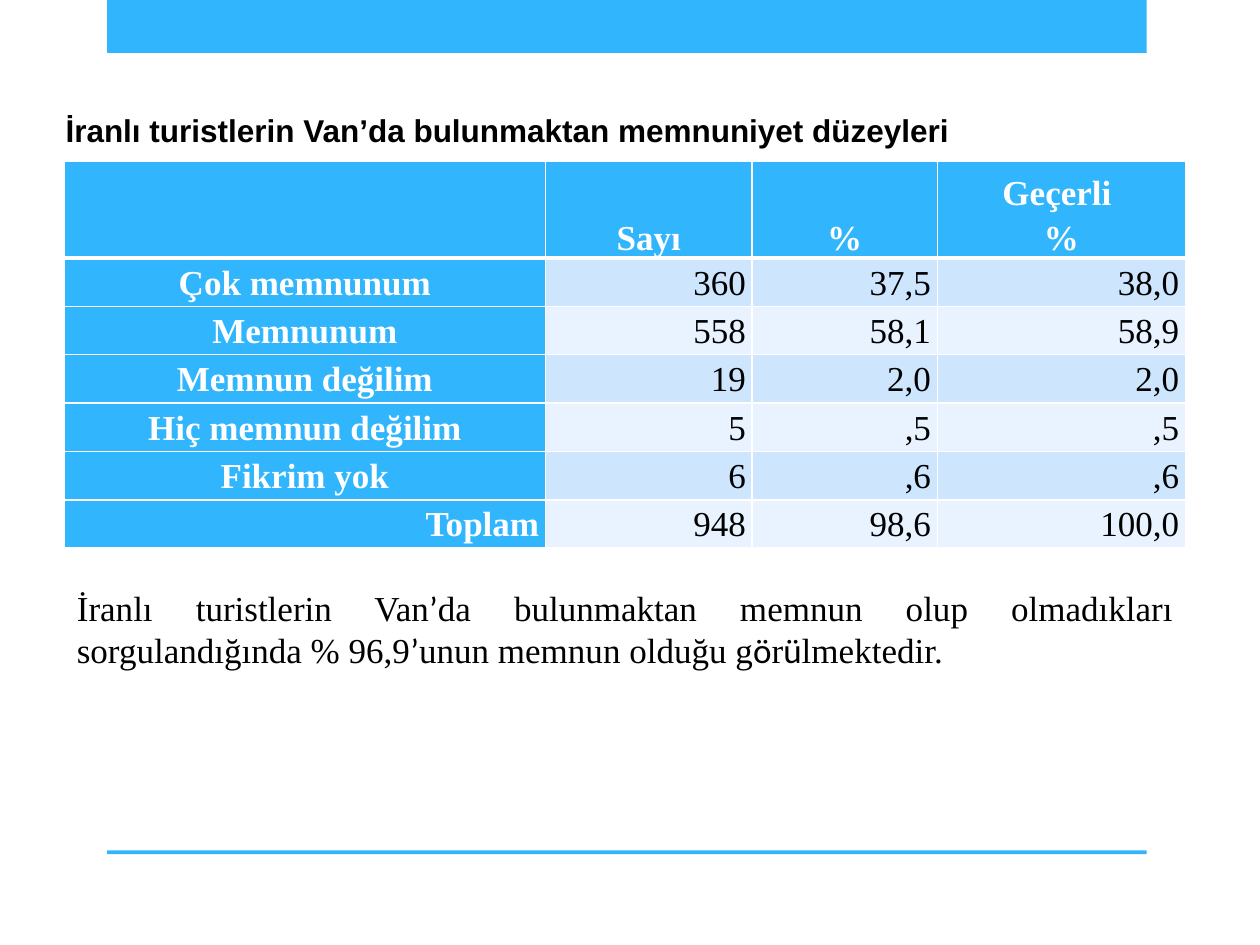
from dataclasses import dataclass

from lxml.etree import SubElement
from pptx import Presentation
from pptx.dml.color import RGBColor
from pptx.enum.shapes import MSO_SHAPE as Shape
from pptx.enum.text import MSO_ANCHOR as Anchor, MSO_AUTO_SIZE as AutoSize, PP_ALIGN as Align
from pptx.oxml.ns import qn
from pptx.util import Inches, Pt


@dataclass(frozen=True)
class Theme:
    accent: str = "31B6FD"
    bands: tuple = ("CEE5FE", "E8F3FF")
    light: str = "FFFFFF"
    dark: str = "000000"
    serif: str = "Times New Roman"
    sans: str = "Arial"
    fallback: str = "Calibri"
    heading_size: int = 18
    text_size: int = 20


THEME = Theme()
WIDTH, HEIGHT = 10, 7.5
MARGIN, CONTENT_WIDTH = 0.51, 8.9
BAR_LEFT, BAR_WIDTH = 0.85, 8.25
COLUMN_WIDTHS = (3.82, 1.64, 1.47, 1.97)
HEADER_HEIGHT, ROW_HEIGHT = 0.7, 0.35

HEADING = "İranlı turistlerin Van’da bulunmaktan memnuniyet düzeyleri"
ANSWERS = (
    ("", "Sayı", "%", "Geçerli \n%"),
    ("Çok memnunum", "360", "37,5", "38,0"),
    ("Memnunum", "558", "58,1", "58,9"),
    ("Memnun değilim", "19", "2,0", "2,0"),
    ("Hiç memnun değilim", "5", ",5", ",5"),
    ("Fikrim yok", "6", ",6", ",6"),
    ("Toplam", "948", "98,6", "100,0"),
)
# Runs alternate between the serif and the fallback font.
FINDING = (
    "İranlı turistlerin Van", "’",
    "da bulunmaktan memnun olup olmadıkları sorgulandığında % 96,9", "’",
    "unun memnun olduğu g", "ö", "r", "ü", "lmektedir.",
)


def add_run(paragraph, text, font, size, color=THEME.dark, bold=False):
    run = paragraph.add_run()
    run.text = text
    run.font.name = font
    run.font.size = Pt(size)
    run.font.bold = bold
    run.font.color.rgb = RGBColor.from_string(color)


def place(placeholder, left, top, width, height, anchor):
    """Move a placeholder and return its justified, unbulleted first paragraph."""
    placeholder.left, placeholder.top = Inches(left), Inches(top)
    placeholder.width, placeholder.height = Inches(width), Inches(height)
    frame = placeholder.text_frame
    frame.word_wrap = True
    frame.auto_size = AutoSize.SHAPE_TO_FIT_TEXT
    frame.vertical_anchor = anchor
    paragraph = frame.paragraphs[0]
    paragraph.alignment = Align.JUSTIFY
    paragraph.space_before = Pt(0)
    properties = paragraph._p.get_or_add_pPr()
    properties.set("marL", "0")
    properties.set("indent", "0")
    SubElement(properties, qn("a:buNone"))
    return paragraph


def add_bar(slide, top, height):
    bar = slide.shapes.add_shape(
        Shape.RECTANGLE, Inches(BAR_LEFT), Inches(top), Inches(BAR_WIDTH), Inches(height))
    bar.shadow.inherit = False
    bar.fill.solid()
    bar.fill.fore_color.rgb = RGBColor.from_string(THEME.accent)
    bar.line.fill.background()


def add_heading(slide):
    paragraph = place(slide.shapes.title, 0.35, 0.83, 9.21, 0.4, Anchor.TOP)
    slide.shapes.title.text_frame.margin_left = Inches(0.17)
    add_run(paragraph, HEADING, THEME.sans, THEME.heading_size, bold=True)


def add_finding(slide):
    paragraph = place(slide.placeholders[1], MARGIN, 4.6, CONTENT_WIDTH, 0.77, Anchor.MIDDLE)
    for index, part in enumerate(FINDING):
        add_run(paragraph, part, THEME.fallback if index % 2 else THEME.serif, THEME.text_size)


def set_borders(cell, row):
    """Draw thin white cell borders, with a thick one under the header row."""
    weights = {"L": 1, "R": 1, "T": 3 if row == 1 else 1, "B": 3 if row == 0 else 1}
    for side, weight in weights.items():
        line = SubElement(cell._tc.get_or_add_tcPr(), qn(f"a:ln{side}"), w=str(Pt(weight)))
        SubElement(SubElement(line, qn("a:solidFill")), qn("a:srgbClr"), val=THEME.light)


def fill_cell(cell, text, row, column):
    is_label = row == 0 or column == 0
    is_centred = is_label and row < len(ANSWERS) - 1
    set_borders(cell, row)
    cell.fill.solid()
    cell.fill.fore_color.rgb = RGBColor.from_string(
        THEME.accent if is_label else THEME.bands[(row - 1) % 2])
    cell.margin_left = cell.margin_right = Inches(0.05)
    cell.margin_top = cell.margin_bottom = 0
    cell.vertical_anchor = Anchor.BOTTOM if row == 0 else Anchor.TOP
    if not text:
        return
    for index, line in enumerate(text.split("\n")):
        frame = cell.text_frame
        paragraph = frame.add_paragraph() if index else frame.paragraphs[0]
        paragraph.alignment = Align.CENTER if is_centred else Align.RIGHT
        paragraph.line_spacing = 1.15
        add_run(paragraph, line, THEME.serif, THEME.text_size,
                THEME.light if is_label else THEME.dark, is_label)


def add_answer_table(slide):
    body_rows = len(ANSWERS) - 1
    table = slide.shapes.add_table(
        len(ANSWERS), len(COLUMN_WIDTHS), Inches(MARGIN), Inches(1.28),
        Inches(CONTENT_WIDTH), Inches(HEADER_HEIGHT + body_rows * ROW_HEIGHT)).table
    for column, width in zip(table.columns, COLUMN_WIDTHS):
        column.width = Inches(width)
    for index, row in enumerate(table.rows):
        row.height = Inches(ROW_HEIGHT if index else HEADER_HEIGHT)
    for row, answer in enumerate(ANSWERS):
        for column, text in enumerate(answer):
            fill_cell(table.cell(row, column), text, row, column)


def main():
    deck = Presentation()
    deck.slide_width, deck.slide_height = Inches(WIDTH), Inches(HEIGHT)
    slide = deck.slides.add_slide(deck.slide_layouts[1])
    add_bar(slide, 0, 0.42)
    add_bar(slide, 0.9 * HEIGHT, 0.03)
    add_heading(slide)
    add_answer_table(slide)
    add_finding(slide)
    deck.save("out.pptx")


if __name__ == "__main__":
    main()
